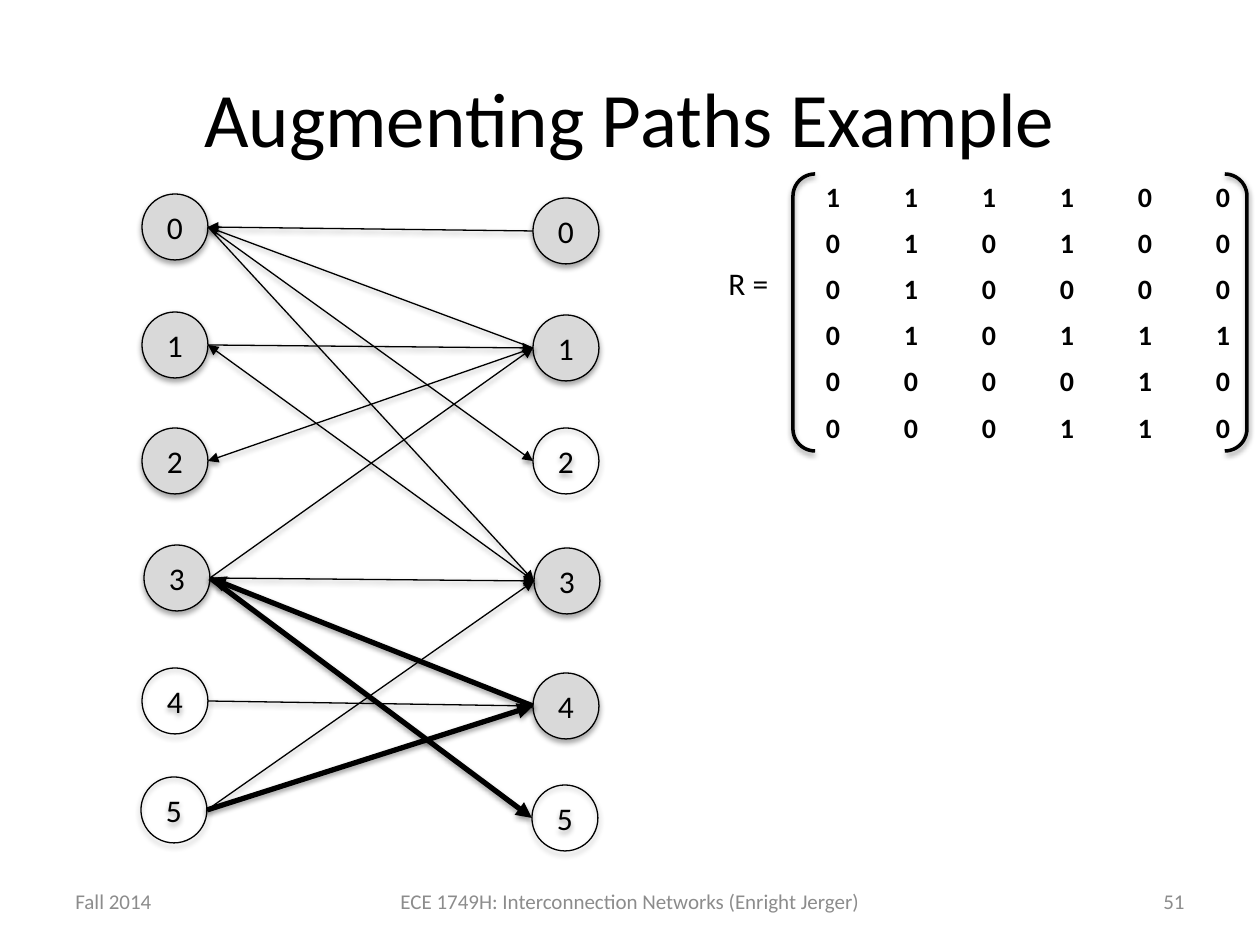
import pptx
import pptx.util
import pptx.dml.color
import pptx.enum.shapes
import pptx.enum.text
from lxml import etree
from pptx.oxml.ns import qn

SCALE = 914400 / 126
FONT, BLACK, GREY, SHADE, WHITE = "Calibri", "000000", "8C8C8C", "D9D9D9", "FFFFFF"
ALIGN = pptx.enum.text.PP_ALIGN
MIDDLE = pptx.enum.text.MSO_ANCHOR.MIDDLE
SHAPE = pptx.enum.shapes.MSO_SHAPE

# text, box, size, colour, alignment, wraps
LABELS = [
    ("Augmenting Paths Example", (63, 38, 1134, 157), 44, BLACK, ALIGN.CENTER, True),
    ("Fall 2014", (63, 876, 294, 50), 12, GREY, ALIGN.LEFT, True),
    ("ECE 1749H: Interconnection Networks (Enright Jerger)", (357, 876, 546, 50),
     12, GREY, ALIGN.CENTER, True),
    ("51", (903, 876, 294, 50), 12, GREY, ALIGN.RIGHT, True),
    ("R =", (716, 258, 66, 50), 18, BLACK, ALIGN.LEFT, False),
]
REQUESTS = ["111100", "010100", "010000", "010111", "000010", "000110"]
MATRIX_LEFT, MATRIX_TOP, COLUMN, ROW = 794, 174, 78, 46
BRACKET = (793, 174, 454, 277)

NODE = 66
INPUTS = [(142, 194, SHADE), (142, 312, SHADE), (142, 428, SHADE),
          (144, 545, SHADE), (142, 668, None), (141, 777, None)]
OUTPUTS = [(533, 198, SHADE), (533, 315, SHADE), (533, 428, None),
           (534, 548, SHADE), (533, 673, SHADE), (532, 785, None)]
THIN, THICK = 0.75, 3
# input, output, arrowhead at input (headEnd) or output (tailEnd), weight
EDGES = [
    (0, 0, "headEnd", THIN), (0, 1, "headEnd", THIN), (0, 2, "tailEnd", THIN),
    (0, 3, "tailEnd", THIN), (1, 1, "tailEnd", THIN), (1, 3, "headEnd", THIN),
    (2, 1, "headEnd", THIN), (3, 1, "tailEnd", THIN), (3, 3, "tailEnd", THIN),
    (3, 5, "tailEnd", THICK), (3, 4, "headEnd", THICK), (4, 4, "tailEnd", THIN),
    (5, 3, "tailEnd", THIN), (5, 4, "tailEnd", THICK),
]


def px(*lengths):
    """Turn px lengths into EMU."""
    return [round(length * SCALE) for length in lengths]


def color(value):
    """Turn a hex string into a colour."""
    return pptx.dml.color.RGBColor.from_string(value)


def write(frame, text, size, ink, align, bold=False):
    """Put one styled paragraph into a text frame."""
    paragraph = frame.paragraphs[0]
    paragraph.text = text
    paragraph.alignment = align
    font = paragraph.font
    font.name, font.size, font.bold = FONT, pptx.util.Pt(size), bold
    font.color.rgb = color(ink)


def outline(shape, weight, distance=20000, alpha=38000):
    """Give a black line and a soft shadow falling straight down."""
    shape.line.color.rgb = color(BLACK)
    shape.line.width = pptx.util.Pt(weight)
    effects = etree.SubElement(shape._element.spPr, qn("a:effectLst"))
    shadow = etree.SubElement(effects, qn("a:outerShdw"), blurRad="40000",
                              dist=str(distance), dir="5400000", rotWithShape="0")
    ink = etree.SubElement(shadow, qn("a:srgbClr"), val=BLACK)
    etree.SubElement(ink, qn("a:alpha"), val=str(alpha))


def add_label(shapes, text, box, size, ink, align, wraps):
    """Add a text box."""
    frame = shapes.add_textbox(*px(*box)).text_frame
    frame.word_wrap = wraps
    frame.vertical_anchor = MIDDLE
    write(frame, text, size, ink, align)


def add_matrix(shapes):
    """Add the request matrix and its brackets."""
    count = len(REQUESTS)
    matrix = shapes.add_table(
        count, count, *px(MATRIX_LEFT, MATRIX_TOP, COLUMN * count, ROW * count)).table
    matrix.first_row = matrix.horz_banding = False
    for r, bits in enumerate(REQUESTS):
        for c, bit in enumerate(bits):
            cell = matrix.cell(r, c)
            cell.fill.solid()
            cell.fill.fore_color.rgb = color(WHITE)
            write(cell.text_frame, bit, 16, BLACK, ALIGN.CENTER, True)
    bracket = shapes.add_shape(SHAPE.DOUBLE_BRACKET, *px(*BRACKET))
    bracket.adjustments[0] = 0.08
    bracket.fill.background()
    outline(bracket, 2)


def add_node(shapes, number, left, top, shade):
    """Add a numbered circle, filled if it has a shade."""
    node = shapes.add_shape(SHAPE.OVAL, *px(left, top, NODE, NODE))
    if shade:
        node.fill.solid()
        node.fill.fore_color.rgb = color(shade)
    else:
        node.fill.background()
    outline(node, THIN, 23000, 35000)
    node.text_frame.vertical_anchor = MIDDLE
    write(node.text_frame, str(number), 18, BLACK, ALIGN.CENTER)


def add_edge(shapes, source, target, arrow_end, weight):
    """Join the right side of an input to the left side of an output."""
    (x1, y1, _), (x2, y2, _) = INPUTS[source], OUTPUTS[target]
    edge = shapes.add_connector(
        pptx.enum.shapes.MSO_CONNECTOR.STRAIGHT,
        *px(x1 + NODE, y1 + NODE / 2, x2, y2 + NODE / 2))
    outline(edge, weight)
    etree.SubElement(edge._element.spPr.find(qn("a:ln")), qn("a:" + arrow_end),
                     type="triangle")


def main():
    """Build the slide."""
    deck = pptx.Presentation()
    deck.slide_width, deck.slide_height = px(1260, 945)
    shapes = deck.slides.add_slide(deck.slide_layouts[6]).shapes
    for label in LABELS:
        add_label(shapes, *label)
    add_matrix(shapes)
    for number, pair in enumerate(zip(INPUTS, OUTPUTS)):
        for node in pair:
            add_node(shapes, number, *node)
    for edge in EDGES:
        add_edge(shapes, *edge)
    deck.save("out.pptx")


if __name__ == "__main__":
    main()
